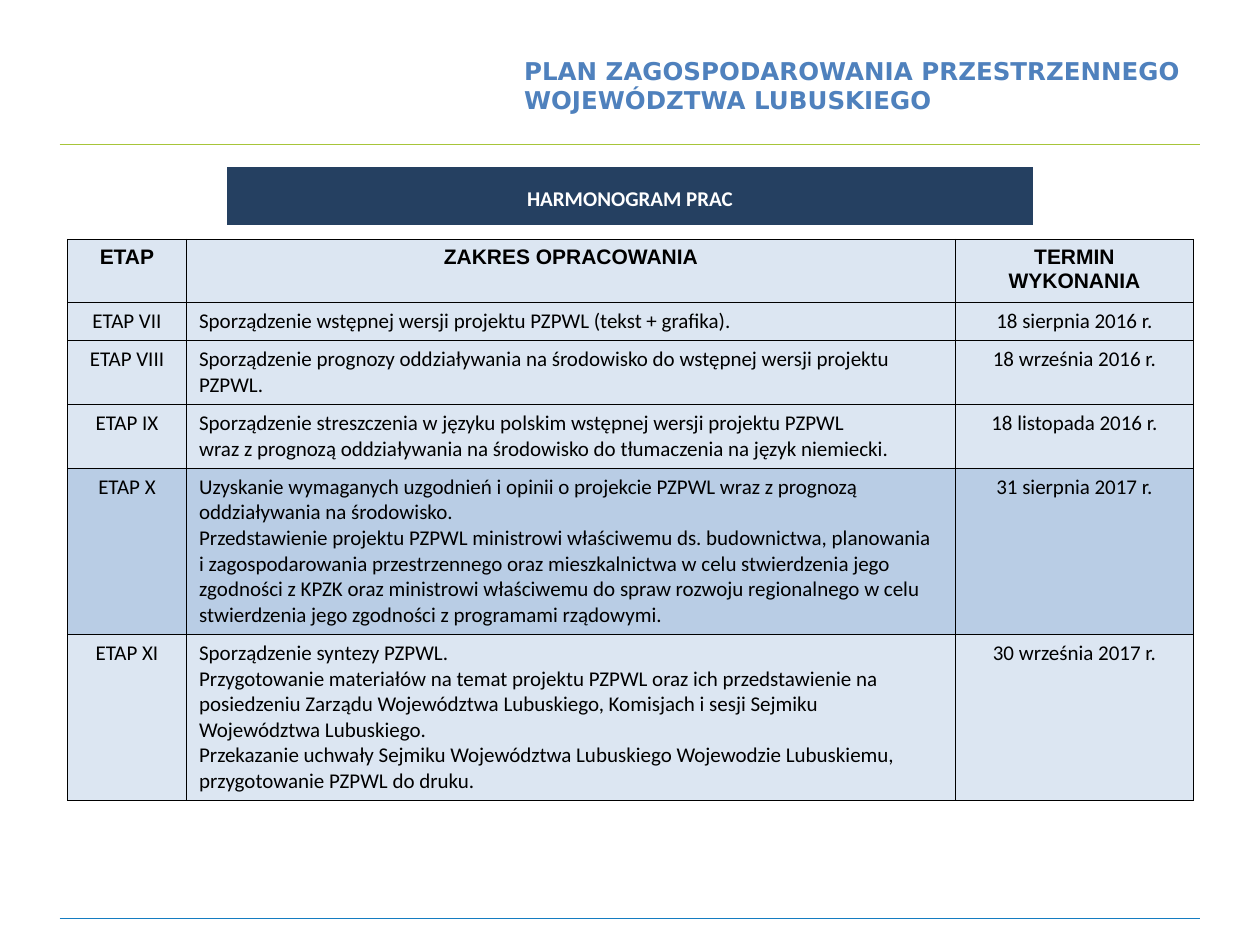
from lxml.etree import SubElement
from pptx import Presentation
from pptx.dml.color import RGBColor
from pptx.enum.shapes import MSO_CONNECTOR
from pptx.enum.text import MSO_ANCHOR, MSO_AUTO_SIZE, PP_ALIGN
from pptx.oxml.ns import qn
from pptx.util import Cm, Pt

# Content
TITLE = "PLAN ZAGOSPODAROWANIA PRZESTRZENNEGO WOJEWÓDZTWA LUBUSKIEGO"
BANNER = "HARMONOGRAM PRAC"
HEADER = ("ETAP", "ZAKRES OPRACOWANIA", "TERMIN WYKONANIA")
# stage, scope paragraphs, deadline, row height in cm, fill
LIGHT, HIGHLIGHT, BLACK, WHITE = "DCE6F2", "B9CDE5", "000000", "FFFFFF"
STAGES = [
    ("ETAP VII", ["Sporządzenie wstępnej wersji projektu PZPWL (tekst + grafika)."],
     "18 sierpnia 2016 r.", 0.76, LIGHT),
    ("ETAP VIII", ["Sporządzenie prognozy oddziaływania na środowisko do wstępnej wersji "
                   "projektu PZPWL."],
     "18 września 2016 r.", 1.27, LIGHT),
    ("ETAP IX", ["Sporządzenie streszczenia w języku polskim wstępnej wersji projektu PZPWL\n"
                 "wraz z prognozą oddziaływania na środowisko do tłumaczenia na język "
                 "niemiecki."],
     "18 listopada 2016 r.", 1.27, LIGHT),
    ("ETAP X", ["Uzyskanie wymaganych uzgodnień i opinii o projekcie PZPWL wraz z prognozą "
                "oddziaływania na środowisko.",
                "Przedstawienie projektu PZPWL ministrowi właściwemu ds. budownictwa, "
                "planowania\ni zagospodarowania przestrzennego oraz mieszkalnictwa w celu "
                "stwierdzenia jego zgodności z KPZK oraz ministrowi właściwemu do spraw "
                "rozwoju regionalnego w celu stwierdzenia jego zgodności z programami "
                "rządowymi."],
     "31 sierpnia 2017 r.", 3.3, HIGHLIGHT),
    ("ETAP XI", ["Sporządzenie syntezy PZPWL.",
                 "Przygotowanie materiałów na temat projektu PZPWL oraz ich przedstawienie "
                 "na posiedzeniu Zarządu Województwa Lubuskiego, Komisjach i sesji Sejmiku "
                 "Województwa Lubuskiego.",
                 "Przekazanie uchwały Sejmiku Województwa Lubuskiego Wojewodzie Lubuskiemu, "
                 "przygotowanie PZPWL do druku."],
     "30 września 2017 r.", 3.3, LIGHT),
]
HEADER_HEIGHT = 1.27
COLUMN_WIDTHS = (2.4, 15.5, 4.8)
RULES = [(2.92, "A7C539"), (18.52, "147CC1")]  # y in cm, colour

# Text formats
TITLE_FONT = {"name": "DejaVu Sans", "size": Pt(14), "bold": True}
HEADER_FONT = {"name": "Arial", "size": Pt(12), "bold": True}
BODY_FONT = {"name": "Calibri", "size": Pt(12), "bold": False}
BANNER_FONT = {**BODY_FONT, "bold": True}


def rgb(value):
    return RGBColor.from_string(value)


def write(frame, paragraphs, font, color, align):
    for index, text in enumerate(paragraphs):
        para = frame.paragraphs[0] if index == 0 else frame.add_paragraph()
        para.text = text
        para.alignment = align
        for span in para.runs:
            for name, value in font.items():
                setattr(span.font, name, value)
            span.font.color.rgb = rgb(color)


def format_cell(cell, fill, border_color, border_widths):
    """Border widths are points in the order left, right, top, bottom."""
    properties = cell._tc.get_or_add_tcPr()
    for side, width in zip(("lnL", "lnR", "lnT", "lnB"), border_widths):
        line = SubElement(properties, qn(f"a:{side}"), w=str(Pt(width)))
        solid = SubElement(line, qn("a:solidFill"))
        SubElement(solid, qn("a:srgbClr"), val=border_color)
    cell.fill.solid()
    cell.fill.fore_color.rgb = rgb(fill)


def add_plain_table(page, left, top, widths, heights):
    table = page.shapes.add_table(len(heights), len(widths), Cm(left), Cm(top),
                                  Cm(sum(widths)), Cm(sum(heights))).table
    table.first_row = table.horz_banding = False
    for column, width in zip(table.columns, widths):
        column.width = Cm(width)
    for row, height in zip(table.rows, heights):
        row.height = Cm(height)
    return table


deck = Presentation()
deck.slide_width, deck.slide_height = Cm(25.4), Cm(19.05)
page = deck.slides.add_slide(deck.slide_layouts[5])

# Rules above and below the content
for y, color in RULES:
    rule = page.shapes.add_connector(MSO_CONNECTOR.STRAIGHT, Cm(1.2), Cm(y), Cm(24.2), Cm(y))
    rule.line.color.rgb = rgb(color)
    rule.line.width = Pt(0.75)
    SubElement(rule._element.spPr, qn("a:effectLst"))

# Title
title = page.shapes.title
title.left, title.top, title.width, title.height = Cm(10.31), Cm(1), Cm(13.97), Cm(1.45)
frame = title.text_frame
frame.word_wrap = True
frame.auto_size = MSO_AUTO_SIZE.NONE
frame.vertical_anchor = MSO_ANCHOR.TOP
write(frame, [TITLE], TITLE_FONT, "4F81BD", PP_ALIGN.LEFT)

# Schedule table
rows = [([[name] for name in HEADER], HEADER_FONT, LIGHT)]
rows += [([[stage], scope, [deadline]], BODY_FONT, fill)
         for stage, scope, deadline, _, fill in STAGES]
heights = [HEADER_HEIGHT] + [stage[3] for stage in STAGES]
schedule = add_plain_table(page, 1.36, 4.82, COLUMN_WIDTHS, heights)
for row_index, (texts, font, fill) in enumerate(rows):
    for column_index, paragraphs in enumerate(texts):
        cell = schedule.cell(row_index, column_index)
        is_scope = row_index > 0 and column_index == 1
        write(cell.text_frame, paragraphs, font, BLACK,
              PP_ALIGN.LEFT if is_scope else PP_ALIGN.CENTER)
        format_cell(cell, fill, BLACK, [0.25] * 4)

# Banner
banner = add_plain_table(page, 4.57, 3.35, [16.26], [1.24]).cell(0, 0)
banner.vertical_anchor = MSO_ANCHOR.MIDDLE
banner.margin_left = banner.margin_right = Cm(0.18)
banner.margin_top = banner.margin_bottom = 0
write(banner.text_frame, [BANNER], BANNER_FONT, WHITE, PP_ALIGN.CENTER)
banner.text_frame.paragraphs[0].line_spacing = 1.15
format_cell(banner, "254061", WHITE, (1, 1, 1, 3))

deck.save("out.pptx")
